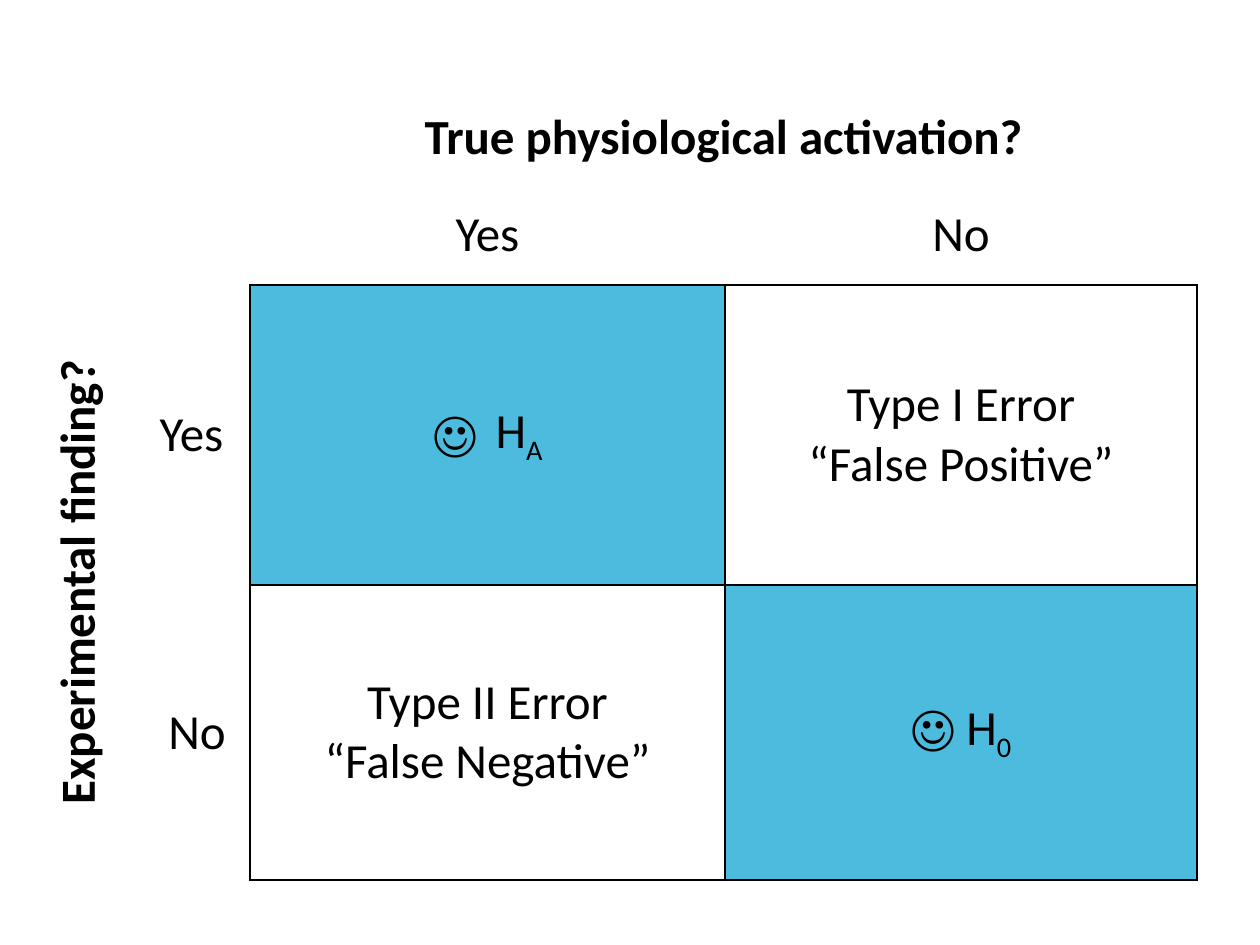
from lxml import etree
from pptx import Presentation
from pptx.dml.color import RGBColor
from pptx.enum.text import MSO_ANCHOR, PP_ALIGN
from pptx.oxml.ns import qn
from pptx.util import Emu, Pt

MIDDLE = MSO_ANCHOR.MIDDLE
CENTER = PP_ALIGN.CENTER
SCALE = 914400 // 126  # EMU per px
FONT, SIZE = "Calibri", 28
BLACK, BLUE = "000000", "4DBBDD"
NO_STYLE = "{2D5ABB26-0587-4C30-8999-92F81FD0307C}"

# Content: (row, column) -> text
LEFT, TOP = 42, 91
COLUMNS = [102, 106, 475, 472]
ROWS = [94, 100, 300, 295]
TEXTS = {
    (0, 2): "True physiological activation?",
    (1, 2): "Yes",
    (1, 3): "No",
    (2, 0): "Experimental finding?",
    (2, 1): "Yes ",
    (2, 2): "H",
    (2, 3): "Type I Error\n“False Positive”",
    (3, 1): "No",
    (3, 2): "Type II Error\n“False Negative”",
    (3, 3): "☺ H",
}
SUBSCRIPTS = {(2, 2): "A", (3, 3): "0"}
BULLETS = {(2, 2): "☺"}
TITLES = {(0, 2): (0, 3), (2, 0): (3, 0)}  # first cell -> last merged cell
CORRECT = [(2, 2), (3, 3)]


def px(length):
    return Emu(length * SCALE)


def color(value):
    return RGBColor.from_string(value)


def borders_of(row, column):
    if row >= 2 and column >= 2:
        return ["lnL", "lnR", "lnT", "lnB"]
    if row == 1 and column >= 2:
        return ["lnB"]
    if row >= 2 and column == 1:
        return ["lnR"]
    return []


def add_borders(cell, sides):
    properties = cell._tc.get_or_add_tcPr()
    for position, side in enumerate(sides):
        line = etree.Element(qn(f"a:{side}"), w=str(Pt(1)))
        fill = etree.SubElement(line, qn("a:solidFill"))
        etree.SubElement(fill, qn("a:srgbClr"), val=BLACK)
        properties.insert(position, line)


def add_bullet(para, symbol):
    properties = para._p.get_or_add_pPr()
    properties.set("marL", str(px(63)))
    properties.set("indent", str(px(-63)))
    etree.SubElement(properties, qn("a:buFont"), typeface=FONT)
    etree.SubElement(properties, qn("a:buChar"), char=symbol)


def write_cell(cell, place):
    cell.text_frame.text = TEXTS[place]
    paras = cell.text_frame.paragraphs
    if place in BULLETS:
        add_bullet(paras[0], BULLETS[place])
    if place in SUBSCRIPTS:
        span = paras[0].add_run()
        span.text = SUBSCRIPTS[place]
        span._r.get_or_add_rPr().set("baseline", "-25000")
    for para in paras:
        para.alignment = CENTER
        for span in para.runs:
            span.font.name = FONT
            span.font.size = Pt(SIZE)
            span.font.bold = place in TITLES
            span.font.color.rgb = color(BLACK)


deck = Presentation()
deck.slide_width, deck.slide_height = px(1260), px(945)
page = deck.slides.add_slide(deck.slide_layouts[6])

# Table frame without banding
frame = page.shapes.add_table(len(ROWS), len(COLUMNS), px(LEFT), px(TOP),
                              px(sum(COLUMNS)), px(sum(ROWS)))
table = frame.table
table.first_row = table.horz_banding = False
table._tbl.tblPr.find(qn("a:tableStyleId")).text = NO_STYLE
for column, width in zip(table.columns, COLUMNS):
    column.width = px(width)
for row, height in zip(table.rows, ROWS):
    row.height = px(height)
for first, last in TITLES.items():
    table.cell(*first).merge(table.cell(*last))

# Cells
for row in range(len(ROWS)):
    for column in range(len(COLUMNS)):
        place = (row, column)
        cell = table.cell(*place)
        cell.vertical_anchor = MIDDLE
        if place in CORRECT:
            cell.fill.solid()
            cell.fill.fore_color.rgb = color(BLUE)
        else:
            cell.fill.background()
        add_borders(cell, borders_of(*place))
        if place in TEXTS:
            write_cell(cell, place)

# The row title reads upwards
table.cell(2, 0)._tc.get_or_add_tcPr().set("vert", "vert270")

deck.save("out.pptx")
